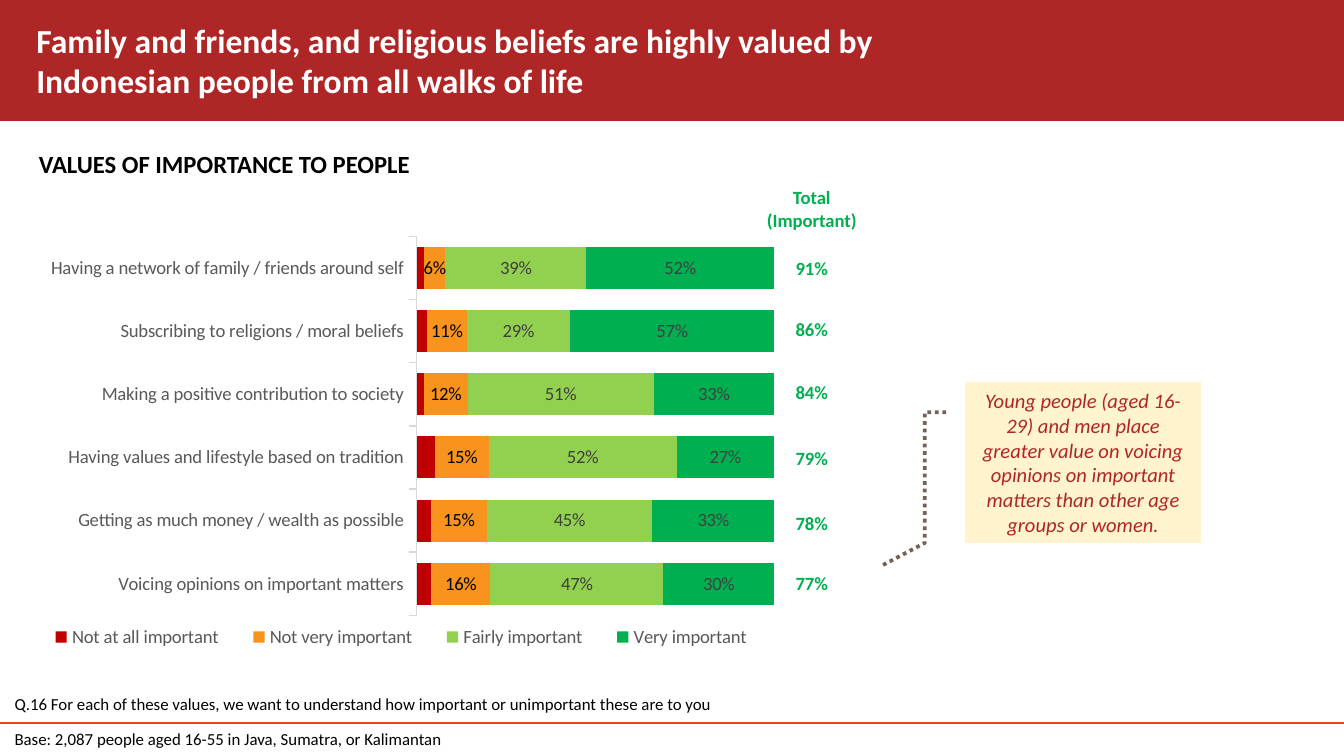
"""Build the slide on values of importance to Indonesian people."""
import pptx
import pptx.util
import pptx.oxml
import pptx.dml.color
import pptx.chart.data
import pptx.enum.chart
import pptx.enum.dml
import pptx.enum.shapes
import pptx.enum.text
from lxml import etree

Inches = pptx.util.Inches
Pt = pptx.util.Pt
RGBColor = pptx.dml.color.RGBColor
Align = pptx.enum.text.PP_ALIGN
Anchor = pptx.enum.text.MSO_ANCHOR
Shape = pptx.enum.shapes.MSO_SHAPE
Kind = pptx.enum.chart

RED = RGBColor(0xAF, 0x26, 0x26)
RULE = RGBColor(0xE6, 0x48, 0x23)
WHITE = RGBColor(0xFF, 0xFF, 0xFF)
BLACK = RGBColor(0, 0, 0)
CREAM = RGBColor(0xFF, 0xF4, 0xCE)
BROWN = RGBColor(0x74, 0x62, 0x56)
GREY = RGBColor(0x59, 0x59, 0x59)
DARK = RGBColor(0x40, 0x40, 0x40)
PALE = RGBColor(0xD9, 0xD9, 0xD9)
CRIMSON = RGBColor(0xC0, 0, 0)
ORANGE = RGBColor(0xF8, 0x93, 0x1D)
LIME = RGBColor(0x92, 0xD0, 0x50)
GREEN = RGBColor(0, 0xB0, 0x50)

TITLE = ("Family and friends, and religious beliefs are highly valued by "
         "Indonesian people from all walks of life")
HEADING = "VALUES OF IMPORTANCE TO PEOPLE"
NOTES = [
    (5.37, "Base: 2,087 people aged 16-55 in Java, Sumatra, or Kalimantan"),
    (5.11, "Q.16 For each of these values, we want to understand how "
           "important or unimportant these are to you"),
]
REMARK = ("Young people (aged 16-29) and men place greater value on voicing "
          "opinions on important matters than other age groups or women.")
BENDS = [0.19, -0.08, 0.19, -0.17, 1, -0.17, 1.14, -0.35]
TOTALS = [
    ("Total\n(Important)", 0.45), ("91%", 0.43), ("86%", 0.48),
    ("84%", 0.46), ("79%", 0.52), ("78%", 0.45), ("77%", 0.45),
]
VALUES = [
    "Having a network of family / friends around self",
    "Subscribing to religions / moral beliefs",
    "Making a positive contribution to society",
    "Having values and lifestyle based on tradition",
    "Getting as much money / wealth as possible",
    "Voicing opinions on important matters",
]
SERIES = [
    ("Not at all important", [0.02, 0.03, 0.02, 0.05, 0.04, 0.04], CRIMSON, None),
    ("Not very important", [0.06, 0.11, 0.12, 0.15, 0.15, 0.16], ORANGE, BLACK),
    ("Fairly important", [0.39, 0.29, 0.51, 0.52, 0.45, 0.47], LIME, DARK),
    ("Very important", [0.52, 0.57, 0.33, 0.27, 0.33, 0.3], GREEN, DARK),
]
WIDE, HIGH = 5.75, 3.5


def style(font, size, color, bold=False, italic=False):
    font.name, font.size = "Calibri", Pt(size)
    font.bold, font.italic = bold, italic
    font.color.rgb = color


def write(frame, text, size, color, align=Align.LEFT, **looks):
    frame.word_wrap = True
    for i, line in enumerate(text.split("\n")):
        para = frame.add_paragraph() if i else frame.paragraphs[0]
        para.text, para.alignment = line, align
        style(para.font, size, color, **looks)


def add_text(slide, box, *args, **looks):
    frame = slide.shapes.add_textbox(*map(Inches, box)).text_frame
    write(frame, *args, **looks)
    return frame


def add_frame(slide):
    band = slide.shapes.add_shape(Shape.RECTANGLE, 0, 0, Inches(10), Inches(0.9))
    band.shadow.inherit = False
    band.fill.solid()
    band.fill.fore_color.rgb = RED
    band.line.fill.background()
    rule = slide.shapes.add_connector(
        pptx.enum.shapes.MSO_CONNECTOR.STRAIGHT,
        0, Inches(5.38), Inches(10), Inches(5.38))
    rule.line.color.rgb, rule.line.width = RULE, Pt(1.5)
    etree.SubElement(rule.element.spPr, pptx.oxml.ns.qn("a:effectLst"))


def add_totals(slide):
    high = sum(h for _, h in TOTALS)
    table = slide.shapes.add_table(
        len(TOTALS), 1, Inches(5.61), Inches(1.33), Inches(0.86), Inches(high)).table
    table.first_row = table.horz_banding = False
    for row, (text, h) in zip(table.rows, TOTALS):
        row.height = Inches(h)
        cell = row.cells[0]
        cell.fill.background()
        cell.vertical_anchor = Anchor.MIDDLE
        cell.margin_left = cell.margin_right = cell.margin_top = Inches(0.01)
        cell.margin_bottom = 0
        write(cell.text_frame, text, 10, GREEN, Align.CENTER, bold=True)


def add_remark(slide):
    note = slide.shapes.add_shape(
        Shape.LINE_CALLOUT_3_NO_BORDER,
        Inches(7.18), Inches(2.84), Inches(1.76), Inches(1.2))
    note.shadow.inherit = False
    for i, bend in enumerate(BENDS):
        note.adjustments[i] = bend
    note.fill.solid()
    note.fill.fore_color.rgb = CREAM
    note.line.color.rgb, note.line.width = BROWN, Pt(2)
    note.line.dash_style = pptx.enum.dml.MSO_LINE.ROUND_DOT
    note.text_frame.vertical_anchor = Anchor.MIDDLE
    write(note.text_frame, REMARK, 11, RED, Align.CENTER, italic=True)


def make_layout(x, y, w, h, inner=False):
    target = '<c:layoutTarget val="inner"/>' if inner else ""
    return pptx.oxml.parse_xml(
        f'<c:layout {pptx.oxml.ns.nsdecls("c")}><c:manualLayout>{target}'
        '<c:xMode val="edge"/><c:yMode val="edge"/>'
        f'<c:x val="{x / WIDE:.4f}"/><c:y val="{y / HIGH:.4f}"/>'
        f'<c:w val="{w / WIDE:.4f}"/><c:h val="{h / HIGH:.4f}"/>'
        '</c:manualLayout></c:layout>')


def set_layout(node, mark, layout):
    for old in node.findall(pptx.oxml.ns.qn("c:layout")):
        node.remove(old)
    if mark is None:
        node.insert(0, layout)
    else:
        node.find(pptx.oxml.ns.qn(mark)).addnext(layout)


def add_bars(slide):
    data = pptx.chart.data.CategoryChartData(number_format="0%")
    data.categories = VALUES
    for name, shares, _, _ in SERIES:
        data.add_series(name, shares)
    chart = slide.shapes.add_chart(
        Kind.XL_CHART_TYPE.BAR_STACKED_100, Inches(0.19), Inches(1.61),
        Inches(WIDE), Inches(HIGH), data).chart
    style(chart.font, 10, BLACK)
    chart.has_title = False
    chart.has_legend = True
    chart.legend.position = Kind.XL_LEGEND_POSITION.BOTTOM
    chart.legend.include_in_layout = False
    style(chart.legend.font, 10, GREY)

    plot = chart.plots[0]
    plot.gap_width, plot.overlap = 50, 100
    plot.vary_by_categories = False
    for bars, (_, _, fill, ink) in zip(plot.series, SERIES):
        bars.format.fill.solid()
        bars.format.fill.fore_color.rgb = fill
        if ink is not None:
            labels = bars.data_labels
            labels.show_value = True
            labels.number_format, labels.number_format_is_linked = "0%", False
            style(labels.font, 10, ink)

    axis = chart.category_axis
    axis.reverse_order = True
    axis.major_tick_mark = Kind.XL_TICK_MARK.OUTSIDE
    axis.format.line.color.rgb, axis.format.line.width = PALE, Pt(0.75)
    style(axis.tick_labels.font, 10, GREY)
    chart.value_axis.visible = False
    chart.value_axis.has_major_gridlines = False

    area = chart.element.find(".//" + pptx.oxml.ns.qn("c:plotArea"))
    set_layout(area, None, make_layout(2.91, 0.15, 2.66, 2.82, True))
    key = chart.element.find(".//" + pptx.oxml.ns.qn("c:legend"))
    set_layout(key, "c:legendPos", make_layout(0.01, 2.99, 5.57, 0.28))


def main():
    deck = pptx.Presentation()
    deck.slide_width = Inches(10)
    deck.slide_height = deck.slide_width * 9 // 16
    slide = deck.slides.add_slide(deck.slide_layouts[6])
    add_frame(slide)
    title = add_text(slide, (0.19, 0, 7.18, 0.89), TITLE, 18, WHITE, bold=True)
    title.vertical_anchor = Anchor.MIDDLE
    title.margin_left = title.margin_right = Inches(0.08)
    title.margin_top = title.margin_bottom = Inches(0.04)
    for top, text in NOTES:
        add_text(slide, (0.01, top, 9.99, 0.25), text, 9, BLACK)
    add_text(slide, (0.19, 1.06, 4.02, 0.32), HEADING, 13.2, BLACK, bold=True)
    add_totals(slide)
    add_remark(slide)
    add_bars(slide)
    deck.save("out.pptx")


if __name__ == "__main__":
    main()
